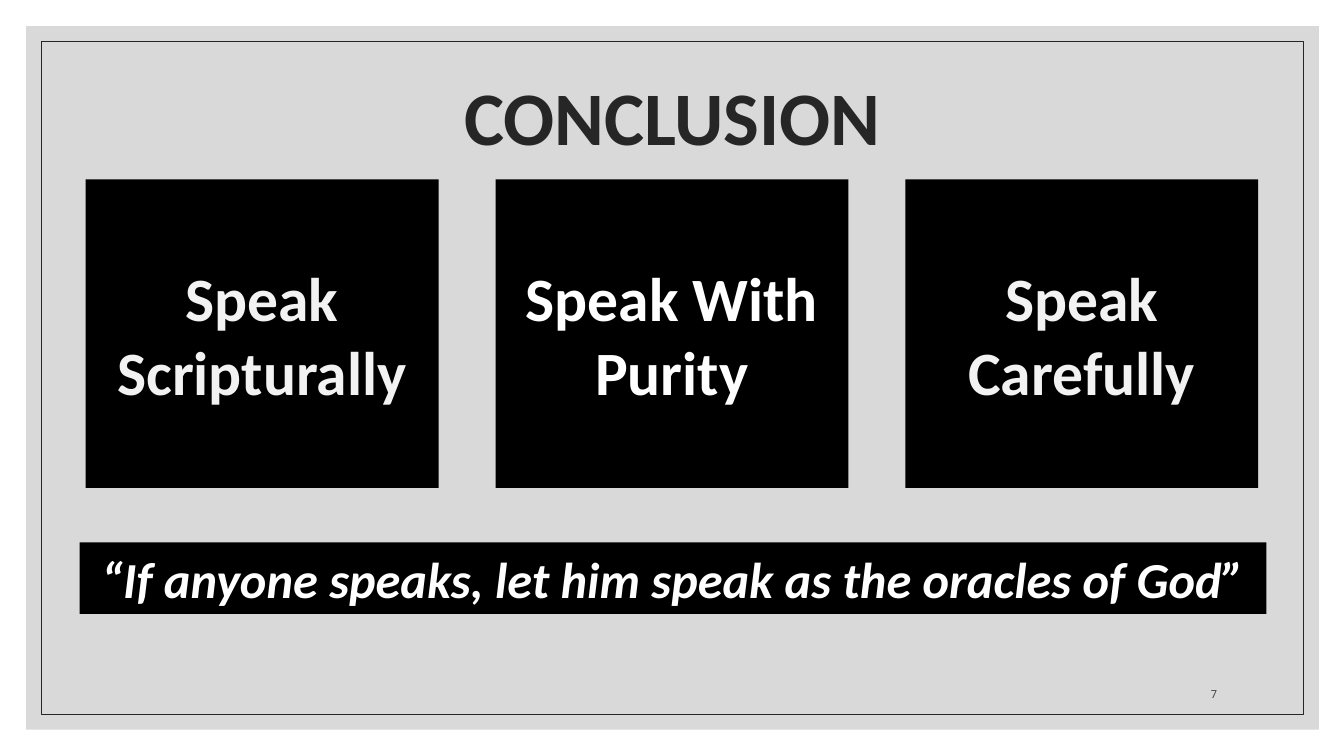
from pptx import Presentation
from pptx.dml.color import RGBColor
from pptx.enum.shapes import MSO_SHAPE as Shape
from pptx.enum.text import MSO_ANCHOR as Anchor, PP_ALIGN as Align
from pptx.util import Inches, Pt

TITLE = "CONCLUSION"
PANELS = [
    ("Speak Scripturally", "F2F2F2"),
    ("Speak With Purity", "FFFFFF"),
    ("Speak Carefully", "F2F2F2"),
]
QUOTE = "“If anyone speaks, let him speak as the oracles of God”"
PAGE_NUMBER = "7"

PANEL_LEFT, PANEL_TOP, PANEL_STEP = 0.85, 1.78, 4.065
PANEL_WIDTH, PANEL_HEIGHT = 3.5, 3.06


def color(hex_code):
    return RGBColor.from_string(hex_code)


def add_box(page, left, top, width, height, fill=None, line=None):
    box = page.shapes.add_shape(
        Shape.RECTANGLE, Inches(left), Inches(top), Inches(width), Inches(height))
    box.shadow.inherit = False
    if fill:
        box.fill.solid()
        box.fill.fore_color.rgb = color(fill)
    else:
        box.fill.background()
    if line:
        box.line.color.rgb = color(line)
        box.line.width = Pt(0.5)
    else:
        box.line.fill.background()
    return box


def write(box, text, size, hex_code, font="Calibri", bold=True, italic=False,
          align=Align.CENTER, anchor=Anchor.MIDDLE):
    frame = box.text_frame
    frame.text = text
    frame.word_wrap = True
    frame.vertical_anchor = anchor
    para = frame.paragraphs[0]
    para.alignment = align
    para.font.name = font
    para.font.size = Pt(size)
    para.font.bold = bold
    para.font.italic = italic
    para.font.color.rgb = color(hex_code)
    return para


deck = Presentation()
deck.slide_width, deck.slide_height = Inches(13.33), Inches(7.5)
page = deck.slides.add_slide(deck.slide_layouts[5])
title = page.shapes.title

backdrop = add_box(page, 0.26, 0.26, 12.82, 6.98, fill="D9D9D9")
border = add_box(page, 0.41, 0.41, 12.52, 6.68, line="262626")
for box in (backdrop, border):
    title.element.addprevious(box.element)  # keep the title in front

title.left, title.top = Inches(1.17), Inches(0.7)
title.width, title.height = Inches(11), Inches(1)
write(title, TITLE, 54, "262626").line_spacing = 0.9

for index, (text, text_color) in enumerate(PANELS):
    panel = add_box(page, PANEL_LEFT + index * PANEL_STEP, PANEL_TOP,
                    PANEL_WIDTH, PANEL_HEIGHT, fill="000000")
    write(panel, text, 44, text_color)

quote = add_box(page, 0.79, 5.38, 11.77, 0.71, fill="000000")
write(quote, QUOTE, 36, "FFFFFF", italic=True)

number = page.shapes.add_textbox(Inches(11.25), Inches(6.6), Inches(0.92), Inches(0.4))
write(number, PAGE_NUMBER, 8, "404040", font="Roboto", bold=False,
      align=Align.RIGHT, anchor=Anchor.BOTTOM)

deck.save("out.pptx")
